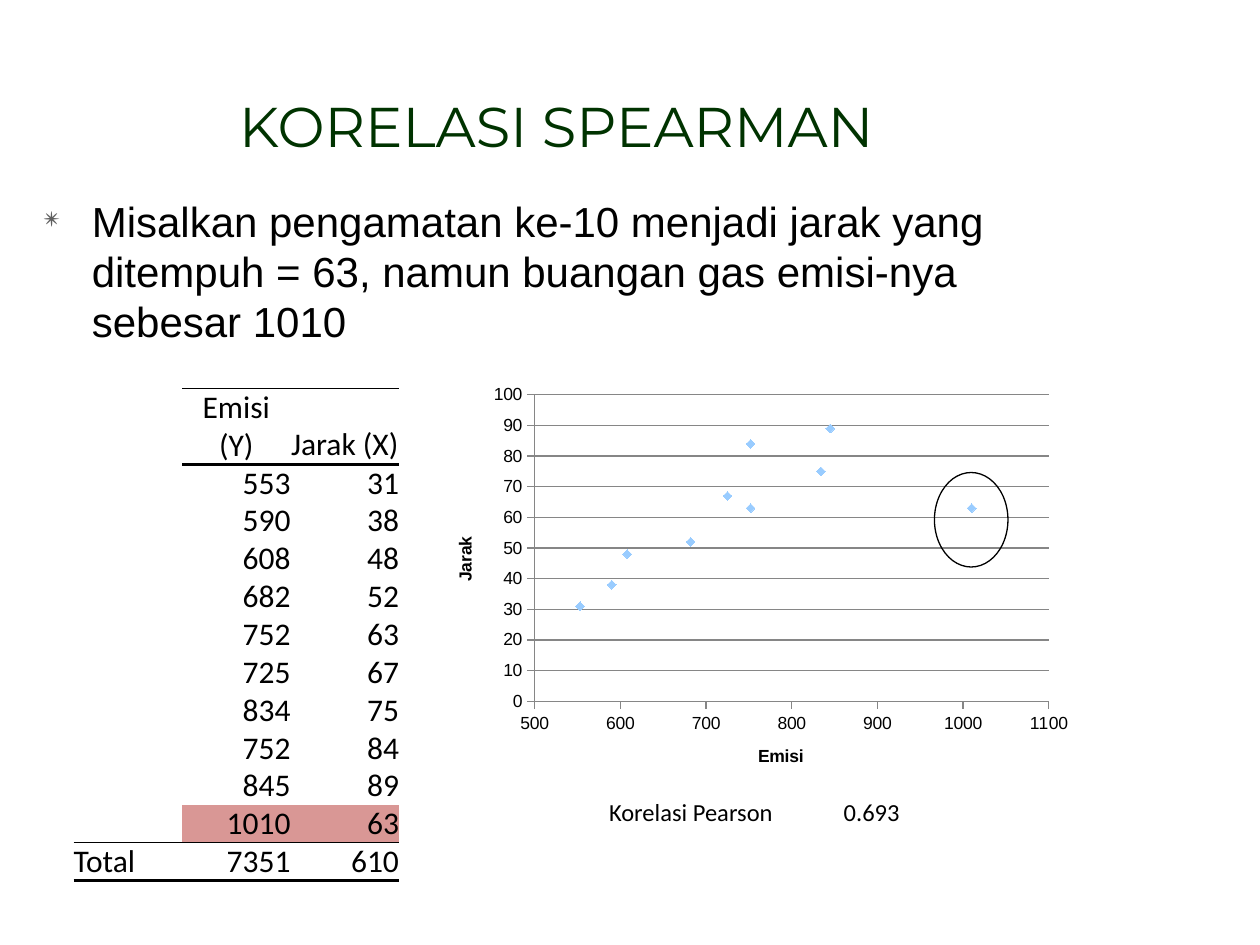
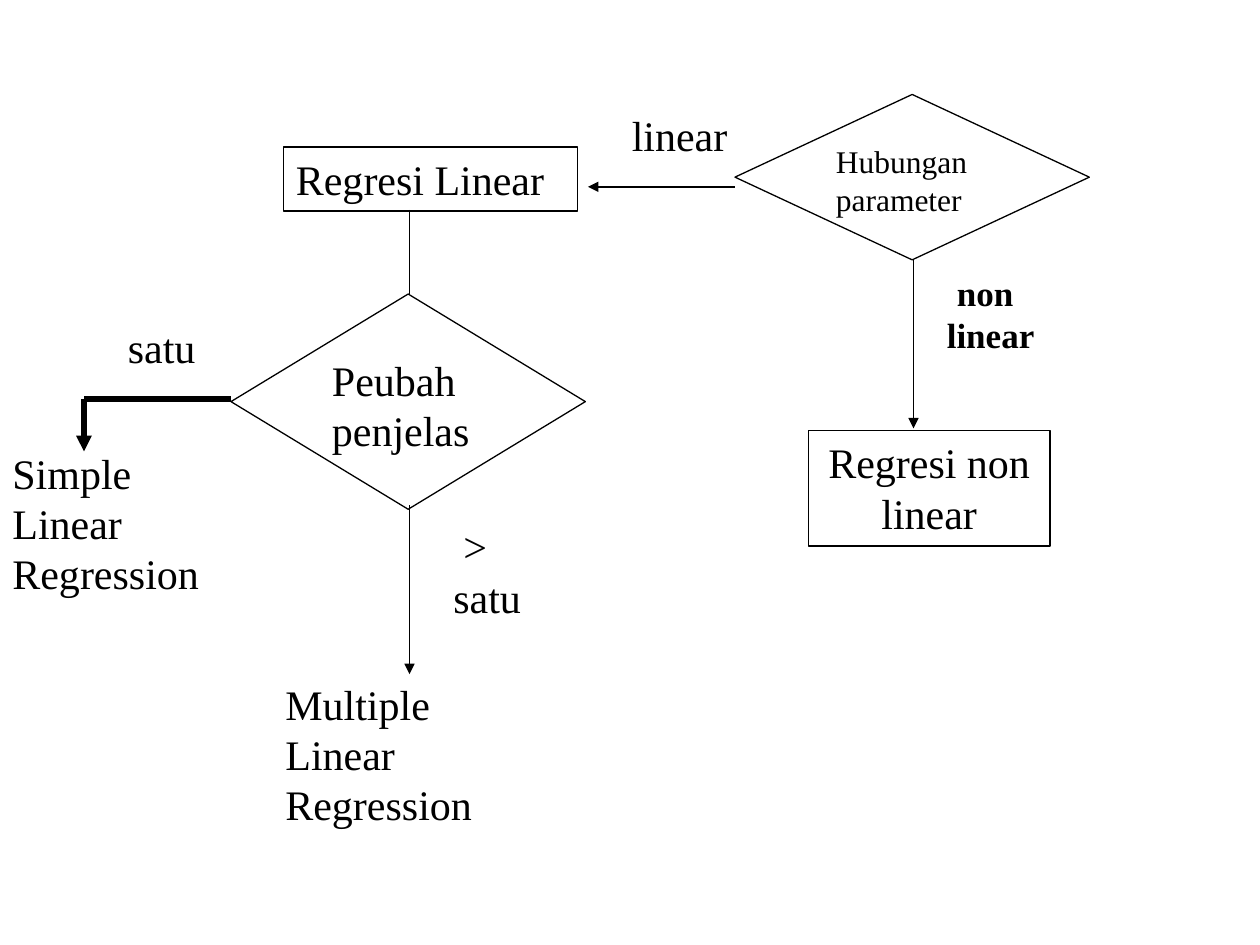
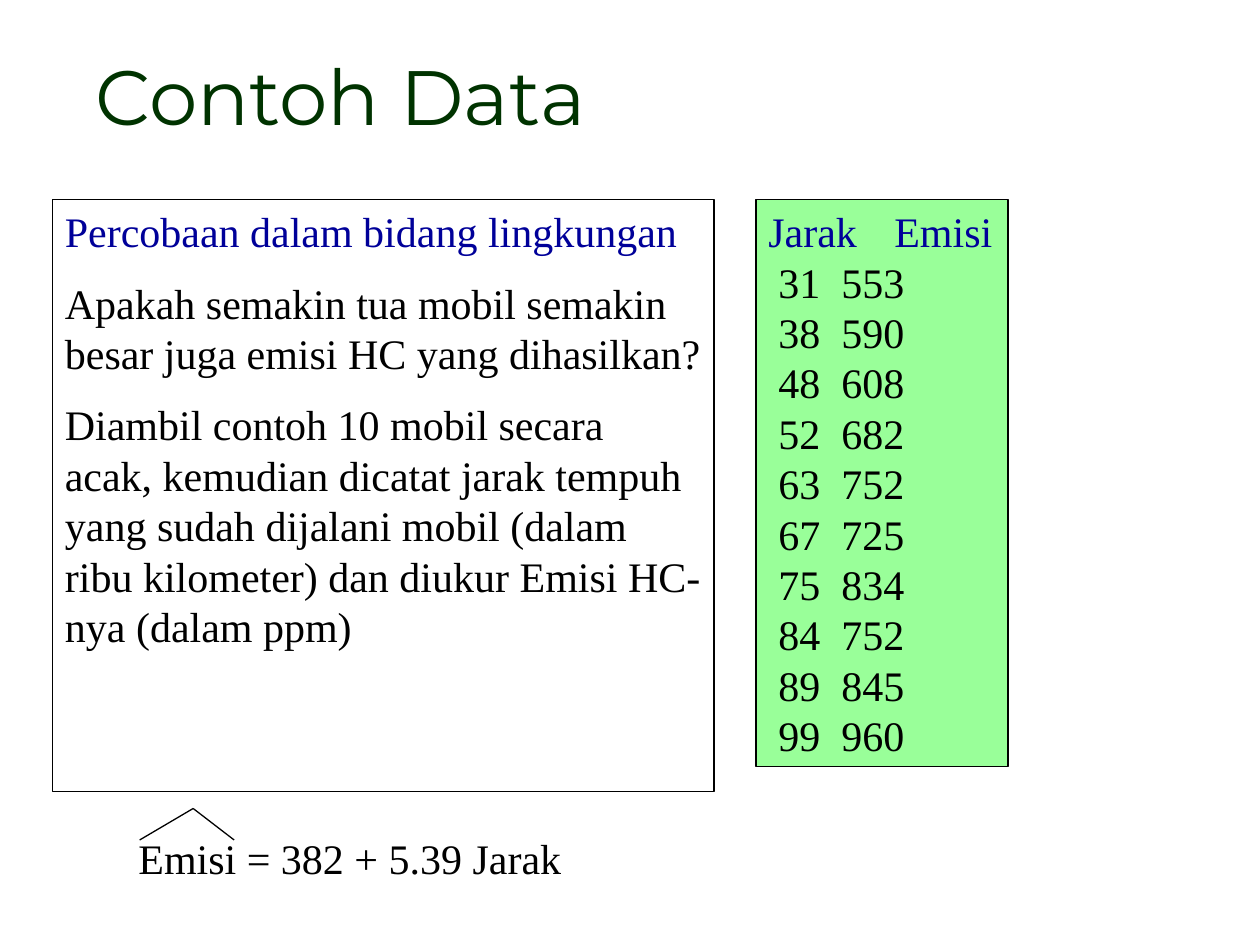
from dataclasses import dataclass

from lxml import etree
from pptx import Presentation
from pptx.chart.data import XyChartData
from pptx.dml.color import RGBColor
from pptx.enum.chart import XL_CHART_TYPE, XL_MARKER_STYLE, XL_TICK_MARK
from pptx.enum.shapes import MSO_CONNECTOR, MSO_SHAPE
from pptx.enum.text import MSO_ANCHOR, PP_ALIGN
from pptx.oxml.ns import qn
from pptx.util import Emu, Inches, Pt

LEFT, CENTER, RIGHT = PP_ALIGN.LEFT, PP_ALIGN.CENTER, PP_ALIGN.RIGHT
TOP, BOTTOM = MSO_ANCHOR.TOP, MSO_ANCHOR.BOTTOM
RECT, DIAMOND, OVAL = MSO_SHAPE.RECTANGLE, MSO_SHAPE.DIAMOND, MSO_SHAPE.OVAL
STRAIGHT = MSO_CONNECTOR.STRAIGHT
SCATTER, MARKER, OUTSIDE = XL_CHART_TYPE.XY_SCATTER, XL_MARKER_STYLE.DIAMOND, XL_TICK_MARK.OUTSIDE

COLUMNS, ROWS = 120, 90
CELL = Inches(10) // COLUMNS


@dataclass(frozen=True)
class Theme:
    title_font: str = "Montserrat"
    serif: str = "Times New Roman"
    sans: str = "Arial"
    table_font: str = "Calibri"
    title: str = "003300"
    ink: str = "000000"
    heading: str = "000099"
    bullet: str = "5F5F5F"
    axis: str = "868686"
    point: str = "99CCFF"
    panel: str = "99FF99"
    outlier: str = "D99795"
    banner_size: float = 44
    title_size: float = 32
    body_size: float = 24
    label_size: float = 20
    small_size: float = 18
    note_size: float = 14
    chart_size: float = 10
    thin: float = 0.5
    normal: float = 0.75
    medium: float = 2
    thick: float = 3


THEME = Theme()


@dataclass(frozen=True)
class Box:
    """A region measured in grid cells."""
    col: float
    row: float
    width: float
    height: float

    def inner(self, col, row, width, height):
        return Box(self.col + col, self.row + row, width, height)

    def emu(self):
        return [cells(n) for n in (self.col, self.row, self.width, self.height)]


PAGE = Box(0, 0, COLUMNS, ROWS)

JARAK = [31, 38, 48, 52, 63, 67, 75, 84, 89, 99]
EMISI = [553, 590, 608, 682, 752, 725, 834, 752, 845, 960]
JARAK_OUTLIER = JARAK[:-1] + [63]
EMISI_OUTLIER = EMISI[:-1] + [1010]


def cells(count):
    return Emu(round(count * CELL))


def rgb(color):
    return RGBColor.from_string(color)


def add_xml(parent, tag, **attributes):
    return etree.SubElement(parent, qn(tag), attributes)


# Text
def write(frame, text, size=THEME.body_size, font=THEME.serif, color=THEME.ink,
          bold=False, align=LEFT, before=0, spacing=None, margin=0, indent=0,
          tab=None, bullet=None):
    """Write one paragraph, filling the first one if it is still empty."""
    first = frame.paragraphs[0]
    para = first if not first.runs else frame.add_paragraph()
    props = para._p.get_or_add_pPr()
    if margin or indent:
        props.set("marL", str(Inches(margin)))
        props.set("indent", str(Inches(indent)))
    if bullet:
        add_xml(add_xml(props, "a:buClr"), "a:srgbClr", val=THEME.bullet)
        add_xml(props, "a:buSzPct", val="65000")
        add_xml(props, "a:buChar", char=bullet)
    if tab:
        add_xml(add_xml(props, "a:tabLst"), "a:tab", pos=str(Inches(tab)), algn="l")
    para.alignment = align
    if before:
        para.space_before = Pt(before)
    if spacing:
        para.line_spacing = spacing
    span = para.add_run()
    span.text = text
    span.font.size, span.font.name, span.font.bold = Pt(size), font, bold
    span.font.color.rgb = rgb(color)


def text_box(page, box, text, anchor=TOP, **style):
    frame = page.shapes.add_textbox(*box.emu()).text_frame
    frame.word_wrap = True
    frame.vertical_anchor = anchor
    write(frame, text, **style)


def title(page, box, text, size):
    text_box(page, box, text, anchor=BOTTOM, size=size, font=THEME.title_font,
             color=THEME.title, align=CENTER)


# Shapes and lines
def outlined(page, kind, box, text=None, fill=None, **style):
    shape = page.shapes.add_shape(kind, *box.emu())
    shape.shadow.inherit = False
    if fill:
        shape.fill.solid()
        shape.fill.fore_color.rgb = rgb(fill)
    else:
        shape.fill.background()
    shape.line.color.rgb = rgb(THEME.ink)
    shape.line.width = Pt(THEME.normal)
    frame = shape.text_frame
    frame.word_wrap = True
    frame.vertical_anchor = TOP
    if text:
        write(frame, text, **style)
    return frame


def line(page, box, start, end, width=THEME.normal, arrow=False):
    points = [cells(n) for x, y in (start, end) for n in (box.col + x, box.row + y)]
    connector = page.shapes.add_connector(STRAIGHT, *points)
    connector.line.color.rgb = rgb(THEME.ink)
    connector.line.width = Pt(width)
    if arrow:
        add_xml(connector.line._get_or_add_ln(), "a:tailEnd", type="triangle")
    add_xml(connector._element.spPr, "a:effectLst")


# Tables
def border(cell, side, width):
    edge = add_xml(cell._tc.get_or_add_tcPr(), f"a:ln{side}", w=str(Pt(width or 0)))
    if width:
        add_xml(add_xml(edge, "a:solidFill"), "a:srgbClr", val=THEME.ink)
    else:
        add_xml(edge, "a:noFill")


def plain_table(page, box, widths, heights, rows, size, aligns, edges, fills):
    """edges maps (boundary, column) to a line width, fills maps (row, column) to a colour."""
    table = page.shapes.add_table(len(rows), len(widths), *box.emu()).table
    table.first_row = table.horz_banding = False
    for column, width in zip(table.columns, widths):
        column.width = cells(width)
    for row, height in zip(table.rows, heights):
        row.height = cells(height)
    for r, values in enumerate(rows):
        for c, value in enumerate(values):
            cell = table.cell(r, c)
            cell.margin_left = cell.margin_right = cell.margin_top = cell.margin_bottom = 0
            cell.vertical_anchor = BOTTOM
            for side, width in (("L", 0), ("R", 0), ("T", edges.get((r, c))),
                                ("B", edges.get((r + 1, c)))):
                border(cell, side, width)
            if (r, c) in fills:
                cell.fill.solid()
                cell.fill.fore_color.rgb = rgb(fills[r, c])
            else:
                cell.fill.background()
            if value != "":
                write(cell.text_frame, str(value), size=size, font=THEME.table_font,
                      align=aligns(r, c))


def data_table(page, box):
    pairs = list(zip(EMISI_OUTLIER, JARAK_OUTLIER))
    rows = [("", "Emisi (Y)", "Jarak (X)"), *(("", *pair) for pair in pairs),
            ("Total", sum(EMISI_OUTLIER), sum(JARAK_OUTLIER))]
    last = len(rows) - 1
    edges = {(b, c): w for b, w in ((0, THEME.thin), (1, THEME.medium),
                                    (last, THEME.thin), (last + 1, THEME.medium))
             for c in range(3) if c or b >= last}
    heights = [3.5 if r in (0, 1, last) else 3.25 for r in range(len(rows))]

    def aligns(row, column):
        return CENTER if row == 0 else RIGHT if column else LEFT

    plain_table(page, box, [box.width / 3] * 3, heights, rows, THEME.small_size, aligns,
                edges, {(last - 1, c): THEME.outlier for c in (1, 2)})


# Chart
def style_axis(axis, name, low, high, step):
    axis.minimum_scale, axis.maximum_scale, axis.major_unit = low, high, step
    axis.major_tick_mark = OUTSIDE
    axis.format.line.color.rgb = rgb(THEME.axis)
    frame = axis.axis_title.text_frame
    write(frame, name, size=THEME.chart_size, font=THEME.sans, bold=True, align=CENTER)
    return frame


def scatter(page, box):
    data = XyChartData()
    series = data.add_series("Series 1")
    for emisi, jarak in zip(EMISI_OUTLIER, JARAK_OUTLIER):
        series.add_data_point(emisi, jarak)
    chart = page.shapes.add_chart(SCATTER, *box.emu(), data).chart
    chart.has_legend = chart.has_title = False
    chart.font.size, chart.font.name = Pt(THEME.chart_size), THEME.sans
    chart.font.color.rgb = rgb(THEME.ink)
    style_axis(chart.category_axis, "Emisi", 500, 1100, 100)
    upright = style_axis(chart.value_axis, "Jarak", 0, 100, 10)
    upright._txBody.bodyPr.set("rot", "-5400000")
    upright._txBody.bodyPr.set("vert", "horz")
    chart.category_axis.has_major_gridlines = False
    chart.value_axis.has_major_gridlines = True
    chart.value_axis.major_gridlines.format.line.color.rgb = rgb(THEME.axis)

    plot = chart.plots[0]
    plot.vary_by_categories = False
    dots = plot.series[0]
    dots.smooth = False
    dots.format.line.fill.background()
    dots.marker.style, dots.marker.size = MARKER, 5
    dots.marker.format.fill.solid()
    dots.marker.format.fill.fore_color.rgb = rgb(THEME.point)
    dots.marker.format.line.color.rgb = rgb(THEME.point)

    # Fixed plot area, as shares of the chart
    area = chart._chartSpace.chart.plotArea
    for old in area.findall(qn("c:layout")):
        area.remove(old)
    layout = etree.Element(qn("c:layout"))
    area.insert(0, layout)
    manual = add_xml(layout, "c:manualLayout")
    for tag, value in (("layoutTarget", "inner"), ("xMode", "edge"), ("yMode", "edge"),
                       ("x", "0.16"), ("y", "0.04"), ("w", "0.79"), ("h", "0.73")):
        add_xml(manual, f"c:{tag}", val=value)


# Slides
def spearman_slide(page, box):
    title(page, box.inner(4, 8, 98, 7.7), "KORELASI SPEARMAN", THEME.title_size)
    text_box(page, box.inner(3, 18, 99, 54),
             "Misalkan pengamatan ke-10 menjadi jarak yang ditempuh = 63, "
             "namun buangan gas emisi-nya sebesar 1010",
             font=THEME.sans, margin=0.38, indent=-0.38, bullet="✴")
    data_table(page, box.inner(7, 37, 31, 46.8))
    scatter(page, box.inner(41, 36, 62, 40))
    plain_table(page, box.inner(58, 76, 34, 2.75), [22.35, 11.65], [2.5],
                [("Korelasi Pearson", "0.693")], THEME.note_size,
                lambda row, column: LEFT, {}, {})
    outlined(page, OVAL, box.inner(89, 45, 7, 9))


def flowchart_slide(page, box):
    # Decisions and model boxes
    for kind, place, text, style in (
            (DIAMOND, (22, 28, 33.75, 20.5), "Peubah penjelas", {}),
            (DIAMOND, (70, 9, 33.75, 15.75), "Hubungan parameter", {"size": THEME.small_size}),
            (RECT, (77, 41, 23, 11), "Regresi non linear", {"align": CENTER}),
            (RECT, (27, 14, 28, 6.1), "Regresi Linear", {})):
        outlined(page, kind, box.inner(*place), text, **style)

    # Outcomes and branch labels
    for place, text, style in (
            ((0, 42, 22, 15.6), "Simple Linear Regression", {}),
            ((26, 64, 22, 15.6), "Multiple Linear Regression", {}),
            ((11, 30, 12, 6), "satu", {}),
            ((42, 49, 9, 10.8), "> satu", {"indent": 0.08}),
            ((59, 9.8, 12, 6), "linear", {}),
            ((89, 25.3, 13, 9.5), "non linear",
             {"indent": 0.08, "size": THEME.label_size, "bold": True})):
        text_box(page, box.inner(*place), text, **style)

    # Flow lines
    for start, end, width, arrow in (
            ((70, 17.8), (56, 17.8), THEME.normal, True),
            ((87, 24.8), (87, 40.8), THEME.normal, True),
            ((39, 20), (39, 28), THEME.normal, False),
            ((39, 48.1), (39, 64.2), THEME.normal, True),
            ((22, 38), (8, 38), THEME.thick, False),
            ((8, 38), (8, 43), THEME.thick, True)):
        line(page, box, start, end, width, arrow)


def sample_slide(page, box):
    title(page, box.inner(0, 4, 65, 10), "Contoh Data", THEME.banner_size)

    # Data panel
    panel = outlined(page, RECT, box.inner(72, 19, 24, 54), "Jarak\tEmisi",
                     fill=THEME.panel, color=THEME.heading, tab=1)
    for jarak, emisi in zip(JARAK, EMISI):
        write(panel, f"{jarak}\t{emisi}", margin=0.08, tab=1.08)

    # Experiment
    story = outlined(page, RECT, box.inner(5, 19, 63, 56.4),
                     "Percobaan dalam bidang lingkungan", color=THEME.heading)
    for text in ("Apakah semakin tua mobil semakin besar juga emisi HC yang dihasilkan?",
                 "Diambil contoh 10 mobil secara acak, kemudian dicatat jarak tempuh yang "
                 "sudah dijalani mobil (dalam ribu kilometer) dan diukur Emisi HC-nya "
                 "(dalam ppm)"):
        write(story, text, before=THEME.body_size / 2)

    # Fitted equation with its hat
    text_box(page, box.inner(12, 80, 80, 4.6), "Emisi = 382 + 5.39 Jarak", spacing=0.7)
    peak = (18.4, 77)
    line(page, box, (13.3, 80), peak)
    line(page, box, peak, (22.3, 80))


def main():
    deck = Presentation()
    deck.slide_width, deck.slide_height = cells(COLUMNS), cells(ROWS)
    for build in (spearman_slide, flowchart_slide, sample_slide):
        build(deck.slides.add_slide(deck.slide_layouts[6]), PAGE)
    deck.save("out.pptx")


if __name__ == "__main__":
    main()
